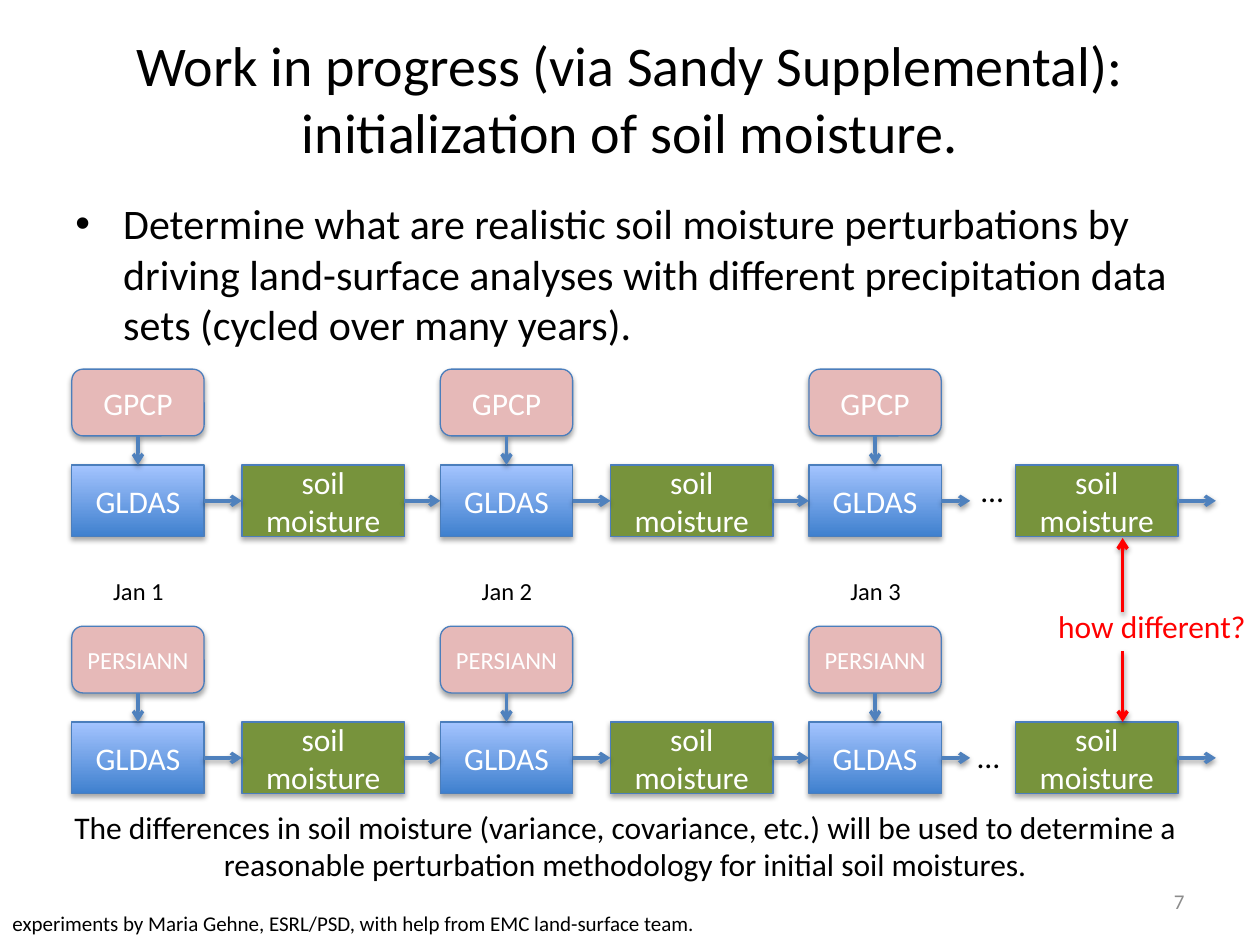
from dataclasses import dataclass

from lxml.etree import SubElement
from pptx import Presentation
from pptx.dml.color import RGBColor as RGB
from pptx.enum.shapes import MSO_CONNECTOR as Link, MSO_SHAPE as Shape
from pptx.enum.text import MSO_ANCHOR as Anchor, MSO_AUTO_SIZE as Fit, PP_ALIGN as Align
from pptx.oxml.ns import qn
from pptx.util import Inches, Pt


@dataclass(frozen=True)
class Theme:
    font: str = "Calibri"
    ink: str = "000000"
    white: str = "FFFFFF"
    grey: str = "8C8C8C"
    red: str = "FF0000"
    pink: str = "E6B9B8"
    green: str = "77933C"
    deep: str = "3F80CE"
    pale: str = "A4C4FF"
    edge: str = "4B7EBC"
    arrow: str = "4F81BD"
    title: int = 32
    body: int = 24
    label: int = 18
    small: int = 14
    note: int = 12


T = Theme()


def style(frame, lines, size, color, align):
    frame.text = "\n".join(lines)
    for para in frame.paragraphs:
        para.alignment = align
        para.font.name = T.font
        para.font.size = Pt(size)
        para.font.color.rgb = RGB.from_string(color)


def shade(effects, alpha, dist):
    outer = SubElement(effects, qn("a:outerShdw"), blurRad=str(Pt(3.1)),
                       dist=str(Pt(dist)), dir="5400000", rotWithShape="0")
    tone = SubElement(outer, qn("a:srgbClr"), val="000000")
    SubElement(tone, qn("a:alpha"), val=str(alpha * 1000))


def add_text(slide, box, lines, size, color=T.ink, align=Align.LEFT, wrap=False):
    shape = slide.shapes.add_textbox(*map(Inches, box))
    frame = shape.text_frame
    frame.word_wrap = wrap
    frame.auto_size = Fit.NONE if wrap else Fit.SHAPE_TO_FIT_TEXT
    style(frame, lines, size, color, align)
    return frame


def add_box(slide, kind, box, lines, size, fill=None):
    shape = slide.shapes.add_shape(kind, *map(Inches, box))
    if fill:
        shape.fill.solid()
        shape.fill.fore_color.rgb = RGB.from_string(fill)
    else:
        shape.fill.gradient()
        shape.fill.gradient_angle = 90
        for stop, tone in zip(shape.fill.gradient_stops, (T.deep, T.pale)):
            stop.color.rgb = RGB.from_string(tone)
    shape.line.color.rgb = RGB.from_string(T.edge)
    shape.line.width = Pt(0.75)
    shape.shadow.inherit = False
    shade(shape._element.spPr.find(qn("a:effectLst")), 35, 1.8)
    frame = shape.text_frame
    frame.word_wrap = True
    frame.margin_left = frame.margin_right = Inches(0.02)
    frame.vertical_anchor = Anchor.MIDDLE
    style(frame, lines, size, T.white, Align.CENTER)
    return shape


def add_arrow(slide, start, end, color=T.arrow):
    line = slide.shapes.add_connector(Link.STRAIGHT, *map(Inches, (*start, *end)))
    line.line.color.rgb = RGB.from_string(color)
    line.line.width = Pt(2)
    SubElement(line.line._get_or_add_ln(), qn("a:tailEnd"), type="arrow")
    shade(SubElement(line._element.spPr, qn("a:effectLst")), 38, 1.6)
    return line


def join(slide, start, out, end, into):
    line = add_arrow(slide, (0, 0), (0, 0))
    line.begin_connect(start, out)
    line.end_connect(end, into)


def add_title(slide, box, words):
    title = slide.shapes.title
    title.left, title.top, title.width, title.height = map(Inches, box)
    title.text_frame.vertical_anchor = Anchor.MIDDLE
    style(title.text_frame, [words], T.title, T.ink, Align.CENTER)


def add_body(slide, box, words):
    frame = add_text(slide, box, [words], T.body, wrap=True)
    props = frame.paragraphs[0]._p.get_or_add_pPr()
    indent = Inches(0.38)
    props.set("marL", str(indent))
    props.set("indent", str(-indent))
    bullet = props.makeelement(qn("a:buChar"), {"char": "•"})
    props.insert(0, bullet)
    bullet.addprevious(props.makeelement(qn("a:buFont"), {"typeface": "Arial"}))


def add_chain(slide, left, top, source, size, dots):
    pitch, base, tall = 2.925, top + 0.76, 0.57
    mid = base + tall / 2
    prior = None
    for step in range(3):
        x = left + step * pitch
        rain = add_box(slide, Shape.ROUNDED_RECTANGLE, (x, top, 1.05, 0.53),
                       [source], size, T.pink)
        model = add_box(slide, Shape.RECTANGLE, (x, base, 1.05, tall),
                        ["GLDAS"], T.label)
        last = step == 2
        soil = add_box(slide, Shape.RECTANGLE,
                       (x + (1.64 if last else 1.35), base, 1.29, tall),
                       ["soil", "moisture"], T.label, T.green)
        join(slide, rain, 2, model, 0)
        if prior:
            join(slide, prior, 3, model, 1)
        if last:
            line = add_arrow(slide, (x + 1.05, mid), (x + 1.28, mid))
            line.begin_connect(model, 3)
            line = add_arrow(slide, (x + 2.93, mid), (x + 3.23, mid))
            line.begin_connect(soil, 3)
        else:
            join(slide, model, 3, soil, 1)
        prior = soil
    add_text(slide, (left + dots[0], top + dots[1], 0.38, 0.4), ["…"], T.label)


def add_dates(slide, left, top):
    for step in range(3):
        add_text(slide, (left + step * 2.925, top, 0.61, 0.34),
                 [f"Jan {step + 1}"], T.small)


def add_query(slide, left, top):
    add_text(slide, (left, top, 1.72, 0.4), ["how different?"], T.label, T.red)
    x = left + 0.61
    for start, end in ((0.09, -0.5), (0.4, 0.96)):
        add_arrow(slide, (x, top + start), (x, top + end), T.red)


def add_foot(slide, left, top):
    add_text(slide, (left + 0.43, top, 9.07, 0.71),
             ["The differences in soil moisture (variance, covariance, etc.) "
              "will be used to determine a",
              "reasonable perturbation methodology for initial soil moistures."],
             T.label, align=Align.CENTER)
    page = add_text(slide, (left + 7.17, top + 0.59, 2.33, 0.4), ["7"],
                    T.note, T.grey, Align.RIGHT, True)
    page.vertical_anchor = Anchor.MIDDLE
    add_text(slide, (left, top + 0.82, 5.69, 0.3),
             ["experiments by Maria Gehne, ESRL/PSD, with help from EMC "
              "land-surface team."], T.note)


def main():
    deck = Presentation()
    deck.slide_width, deck.slide_height = Inches(10), Inches(7.5)
    slide = deck.slides.add_slide(deck.slide_layouts[5])
    add_title(slide, (0.5, 0.15, 9, 1.25),
              "Work in progress (via Sandy Supplemental): "
              "initialization of soil moisture.")
    add_body(slide, (0.5, 1.52, 9, 2.2),
             "Determine what are realistic soil moisture perturbations by "
             "driving land-surface analyses with different precipitation data "
             "sets (cycled over many years).")
    add_chain(slide, 0.57, 2.93, "GPCP", T.label, (7.12, 0.76))
    add_dates(slide, 0.8, 4.52)
    add_chain(slide, 0.57, 4.97, "PERSIANN", T.small, (7.09, 0.83))
    add_query(slide, 8.3, 4.77)
    add_foot(slide, 0, 6.36)
    deck.save("out.pptx")


if __name__ == "__main__":
    main()
